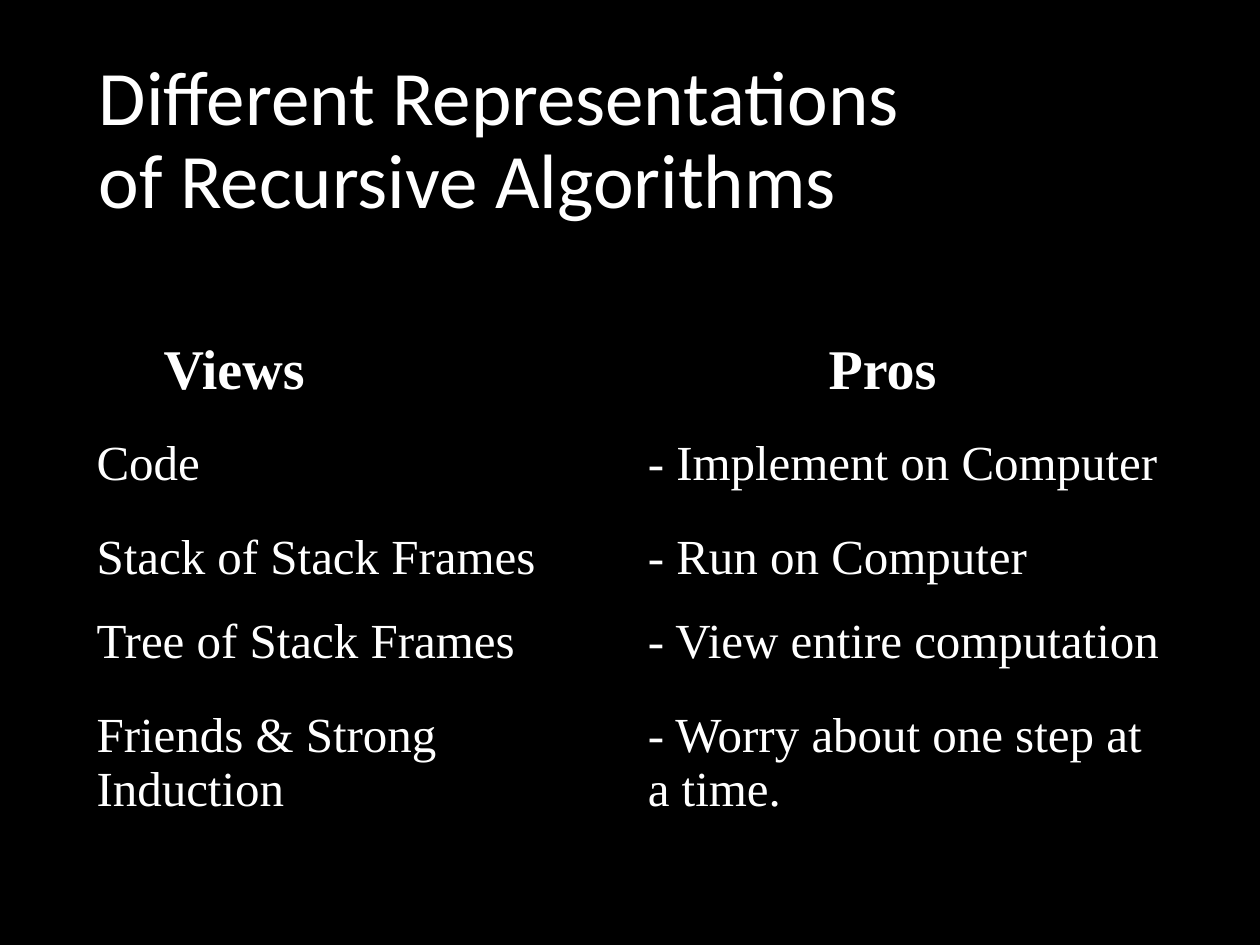
from lxml import etree
from pptx import Presentation
from pptx import util as u
from pptx.dml.color import RGBColor
from pptx.enum import text
from pptx.oxml import ns

SERIF = "Times New Roman"
WHITE = "FFFFFF"
BLACK = "000000"

VIEWS_AND_PROS = [
    ("Code", "- Implement on Computer"),
    ("Stack of Stack Frames", "- Run on Computer"),
    ("Tree of Stack Frames", "- View entire computation"),
    ("Friends & Strong Induction", "- Worry about one step at a time."),
]
ROW_HEIGHTS = [54, 47.5, 54, 56]


def color(hex_string):
    return RGBColor.from_string(hex_string)


def set_font(paragraph, name, size, bold=False):
    paragraph.font.name = name
    paragraph.font.size = u.Pt(size)
    paragraph.font.bold = bold
    paragraph.font.color.rgb = color(WHITE)


def add_text_box(slide, box, content, wrap):
    shape = slide.shapes.add_textbox(*map(u.Pt, box))
    shape.text_frame.word_wrap = wrap
    shape.text_frame.text = content
    return shape.text_frame


def add_title(slide, box):
    frame = add_text_box(
        slide, box, "Different Representations\vof Recursive Algorithms", True)
    frame.vertical_anchor = text.MSO_ANCHOR.MIDDLE
    paragraph = frame.paragraphs[0]
    paragraph.line_spacing = 0.9
    set_font(paragraph, "Calibri", 44)


def add_heading(slide, box, content):
    frame = add_text_box(slide, box, content, False)
    frame.auto_size = text.MSO_AUTO_SIZE.SHAPE_TO_FIT_TEXT
    set_font(frame.paragraphs[0], SERIF, 32, bold=True)


def clear_cell(cell):
    # Invisible borders and no fill
    properties = cell._tc.get_or_add_tcPr()
    for side in ("a:lnL", "a:lnR", "a:lnT", "a:lnB"):
        line = etree.SubElement(properties, ns.qn(side))
        etree.SubElement(line, ns.qn("a:noFill"))
    cell.fill.background()


def add_views_table(slide, box):
    left, top, width = box
    table = slide.shapes.add_table(
        len(VIEWS_AND_PROS), 2, u.Pt(left), u.Pt(top),
        u.Pt(width), u.Pt(sum(ROW_HEIGHTS))).table
    table.first_row = table.horz_banding = False
    for column in table.columns:
        column.width = u.Pt(width / 2)
    for row, height, entries in zip(table.rows, ROW_HEIGHTS, VIEWS_AND_PROS):
        row.height = u.Pt(height)
        for cell, entry in zip(row.cells, entries):
            clear_cell(cell)
            cell.text = entry
            set_font(cell.text_frame.paragraphs[0], SERIF, 28)


def main():
    presentation = Presentation()
    presentation.slide_width = u.Pt(720)
    presentation.slide_height = u.Pt(540)
    slide = presentation.slides.add_slide(presentation.slide_layouts[6])

    # Black background
    slide.background.fill.solid()
    slide.background.fill.fore_color.rgb = color(BLACK)

    # Title, table and column headings
    add_title(slide, (49.5, 28.75, 621, 104.4))
    add_views_table(slide, (48, 246, 630))
    add_heading(slide, (466.5, 187.2, 77, 45.4), "Pros")
    add_heading(slide, (86.4, 187.2, 96.5, 45.4), "Views")

    presentation.save("out.pptx")


if __name__ == "__main__":
    main()
